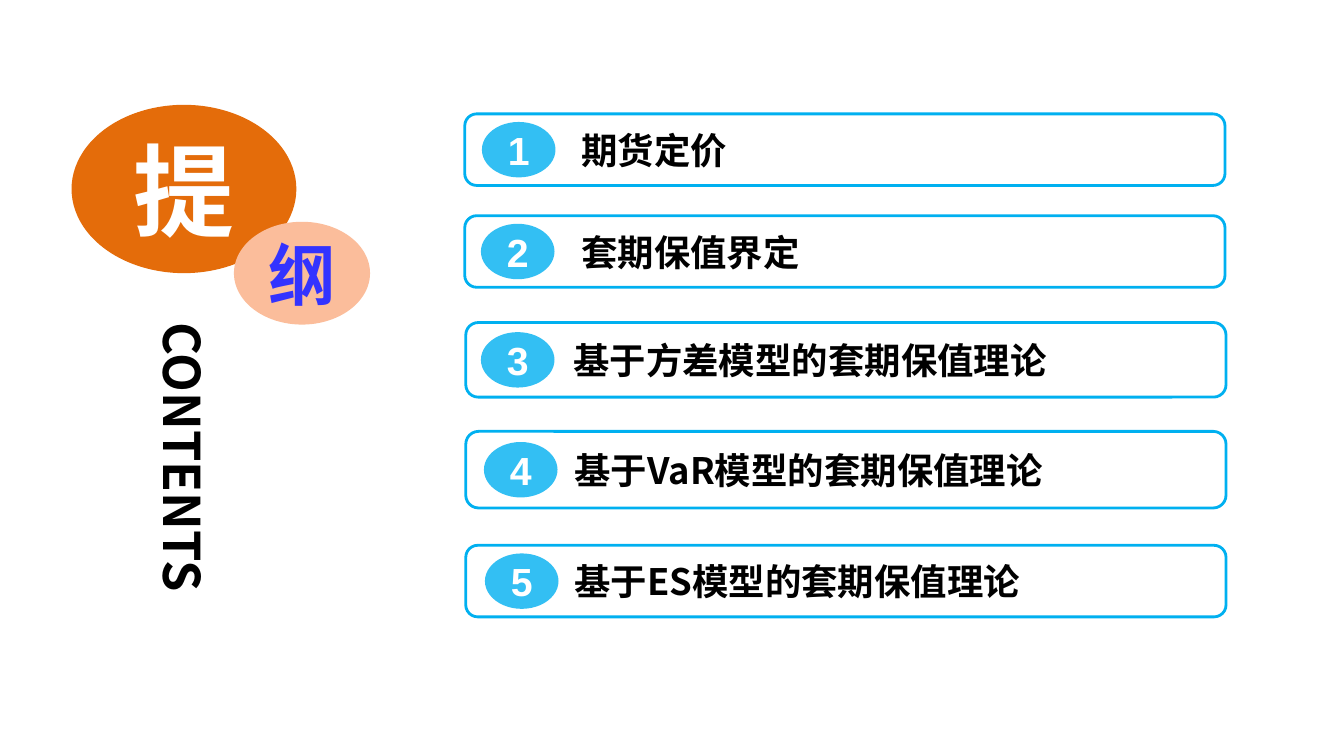
from lxml import etree
from pptx import Presentation
from pptx.dml.color import RGBColor
from pptx.enum.shapes import MSO_SHAPE
from pptx.enum.text import MSO_ANCHOR, PP_ALIGN
from pptx.oxml.ns import qn
from pptx.util import Inches, Pt

ELLIPSE, ROUNDED = MSO_SHAPE.OVAL, MSO_SHAPE.ROUNDED_RECTANGLE
MIDDLE = MSO_ANCHOR.MIDDLE
LEFT, CENTER = PP_ALIGN.LEFT, PP_ALIGN.CENTER

WHITE = RGBColor(0xFF, 0xFF, 0xFF)
BLACK = RGBColor(0x00, 0x00, 0x00)
SKY = RGBColor(0x00, 0xB0, 0xF0)
ORANGE = RGBColor(0xE4, 0x6C, 0x0A)
PEACH = RGBColor(0xFB, 0xBD, 0x9B)
INDIGO = RGBColor(0x33, 0x33, 0xFF)

CJK_FONT = "Noto Sans CJK SC"
LATIN_FONT = "Arial"

ITEM_WIDTH = 7.54
BADGE_WIDTH, BADGE_HEIGHT = 0.73, 0.55

# title, left, top, height, badge offset, text inset
AGENDA = [
    ("期货定价", 4.61, 1.13, 0.71, 0.17, 1.12),
    ("套期保值界定", 4.61, 2.14, 0.71, 0.16, 1.12),
    ("基于方差模型的套期保值理论", 4.62, 3.2, 0.74, 0.15, 1.03),
    ("基于VaR模型的套期保值理论", 4.62, 4.28, 0.76, 0.18, 1.04),
    ("基于ES模型的套期保值理论", 4.62, 5.41, 0.71, 0.19, 1.04),
]


def set_text(shape, text, size, color, font=CJK_FONT, align=CENTER, inset=0):
    """Write one bold, vertically centred line with the given left inset."""
    frame = shape.text_frame
    frame.vertical_anchor = MIDDLE
    frame.margin_left = Inches(inset)
    frame.margin_right = frame.margin_top = frame.margin_bottom = 0
    paragraph = frame.paragraphs[0]
    paragraph.text = text
    paragraph.alignment = align
    paragraph.font.size = Pt(size)
    paragraph.font.bold = True
    paragraph.font.name = font
    paragraph.font.color.rgb = color
    for run in paragraph.runs:
        properties = run.font._element
        etree.SubElement(properties, qn("a:ea")).set("typeface", font)


def add_filled(slide, preset, left, top, width, height, fill):
    shape = slide.shapes.add_shape(
        preset, Inches(left), Inches(top), Inches(width), Inches(height))
    shape.shadow.inherit = False
    shape.fill.solid()
    shape.fill.fore_color.rgb = fill
    shape.line.fill.background()
    return shape


def add_heading(slide, left, top):
    """Two overlapping discs with the vertical caption below them."""
    large = add_filled(slide, ELLIPSE, left, top, 2.23, 1.67, ORANGE)
    set_text(large, "提", 72, WHITE)
    small = add_filled(slide, ELLIPSE, left + 1.61, top + 1.16, 1.35, 1.02, PEACH)
    set_text(small, "纲", 48, INDIGO)

    caption = slide.shapes.add_textbox(
        Inches(left + 0.67), Inches(top + 2.16), Inches(0.89), Inches(3))
    caption.text_frame.word_wrap = True
    set_text(caption, "CONTENTS", 36, BLACK, align=LEFT)
    caption.text_frame._txBody.bodyPr.set("vert", "eaVert")


def add_agenda_item(slide, number, title, left, top, height, badge_offset, inset):
    bar = add_filled(slide, ROUNDED, left, top, ITEM_WIDTH, height, WHITE)
    bar.line.color.rgb = SKY
    bar.line.width = Pt(2)
    set_text(bar, title, 26, BLACK, align=LEFT, inset=inset)

    badge = add_filled(slide, ELLIPSE, left + badge_offset,
                       top + (height - BADGE_HEIGHT) / 2,
                       BADGE_WIDTH, BADGE_HEIGHT, SKY)
    color = badge.fill._xPr.find(".//" + qn("a:srgbClr"))
    etree.SubElement(color, qn("a:alpha")).set("val", "80000")
    badge.text_frame.word_wrap = False
    set_text(badge, str(number), 28, WHITE, font=LATIN_FONT)


def main():
    deck = Presentation()
    deck.slide_width, deck.slide_height = Inches(13.33), Inches(7.5)
    slide = deck.slides.add_slide(deck.slide_layouts[6])
    add_heading(slide, 0.71, 1.04)
    for number, item in enumerate(AGENDA, start=1):
        add_agenda_item(slide, number, *item)
    deck.save("out.pptx")


if __name__ == "__main__":
    main()
